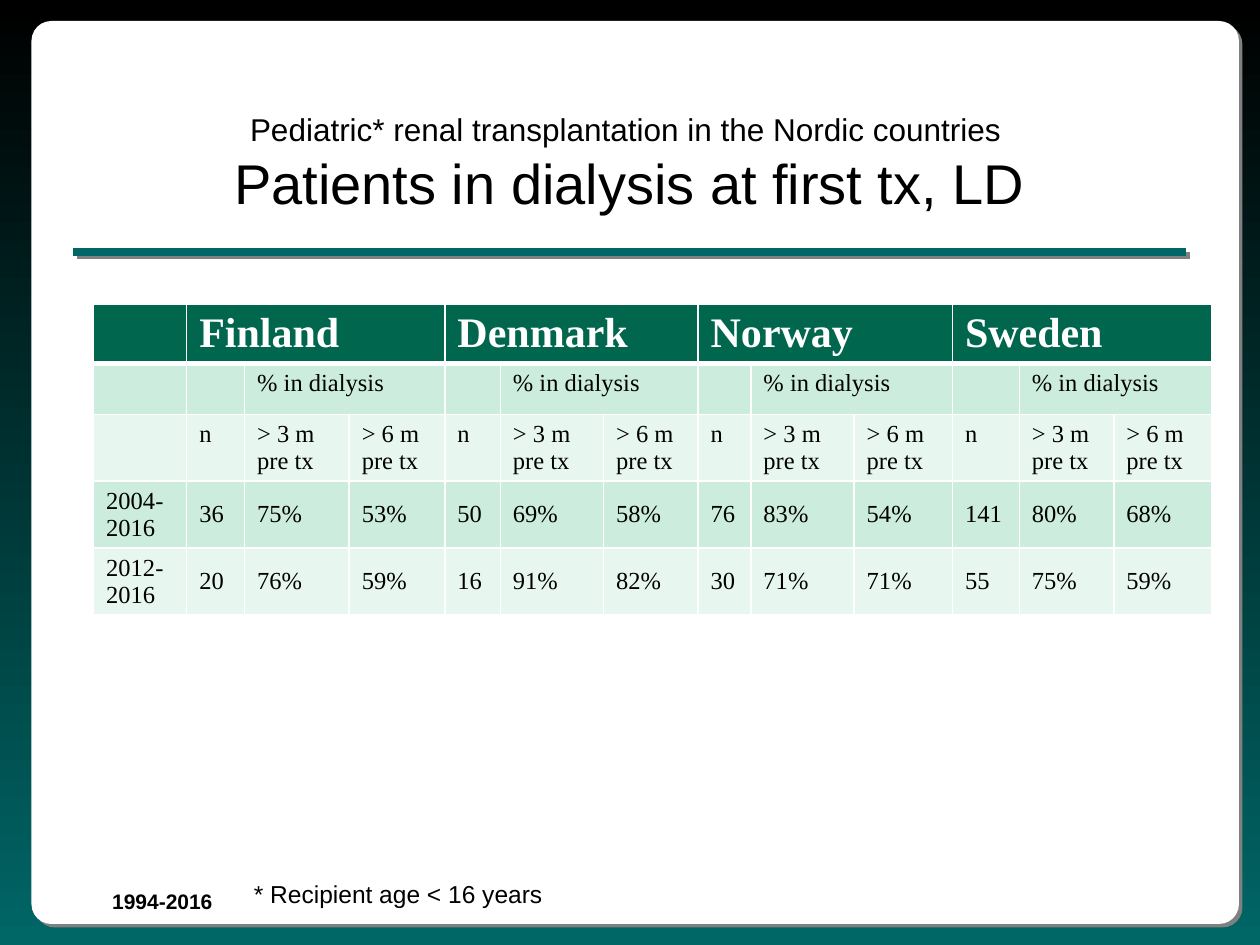
from lxml.etree import SubElement
from pptx import Presentation
from pptx.dml.color import RGBColor
from pptx.enum.shapes import MSO_CONNECTOR, MSO_SHAPE
from pptx.enum.text import MSO_ANCHOR, MSO_AUTO_SIZE, PP_ALIGN
from pptx.oxml.ns import qn
from pptx.util import Pt

COUNTRIES = ["Finland", "Denmark", "Norway", "Sweden"]
PERIODS = [
    ["2004-2016", "36", "75%", "53%", "50", "69%", "58%",
     "76", "83%", "54%", "141", "80%", "68%"],
    ["2012-2016", "20", "76%", "59%", "16", "91%", "82%",
     "30", "71%", "71%", "55", "75%", "59%"],
]
WIDTHS = [53.2, 33.1, 59.8, 54.7, 31.7, 59, 54, 30.2, 59, 56.2, 38.2, 54, 56.2]


def color(value):
    """Turn a hex string into a colour."""
    return RGBColor.from_string(value)


class DialysisSlide:
    """Hold the style and the slide, and draw each kind of element."""

    INK, PAPER, TEAL, SHADE = "000000", "FFFFFF", "006666", "808080"
    HEADER, BANDS = "00664D", ["CCECDE", "E7F6EF"]
    SANS, SERIF = "Arial", "Times New Roman"

    def __init__(self, deck):
        """Add a title-only slide with the gradient background."""
        self.slide = deck.slides.add_slide(deck.slide_layouts[5])
        backdrop = self.slide.background.fill
        backdrop.gradient()
        backdrop.gradient_angle = 270
        for stop, shade, position in zip(
                backdrop.gradient_stops, [self.INK, self.TEAL], [0, 1]):
            stop.color.rgb = color(shade)
            stop.position = position

    def format(self, font, shade=INK, **values):
        """Set the font values and the font colour."""
        for name, value in values.items():
            setattr(font, name, value)
        font.color.rgb = color(shade)

    def shadow(self, shape):
        """Give a shape a hard grey shadow to the lower right."""
        effects = SubElement(shape.element.spPr, qn("a:effectLst"))
        outer = SubElement(effects, qn("a:outerShdw"), blurRad="0",
                           dist=str(Pt(2.8)), dir="2700000", algn="ctr", rotWithShape="0")
        SubElement(outer, qn("a:srgbClr"), val=self.SHADE)

    def panel(self, left, top, width, height):
        """Draw the rounded white sheet."""
        sheet = self.slide.shapes.add_shape(
            MSO_SHAPE.ROUNDED_RECTANGLE, Pt(left), Pt(top), Pt(width), Pt(height))
        sheet.adjustments[0] = 0.022
        sheet.fill.solid()
        sheet.fill.fore_color.rgb = color(self.PAPER)
        sheet.line.fill.background()
        self.shadow(sheet)

    def rule(self, left, right, level):
        """Draw the heavy horizontal rule."""
        bar = self.slide.shapes.add_connector(
            MSO_CONNECTOR.STRAIGHT, Pt(left), Pt(level), Pt(right), Pt(level))
        bar.line.width = Pt(4.5)
        bar.line.color.rgb = color(self.TEAL)
        self.shadow(bar)

    def title(self, lead, heading, **place):
        """Fill the title and bring it in front of the sheet."""
        title = self.slide.shapes.title
        for name, value in place.items():
            setattr(title, name, Pt(value))
        title.element.getparent().append(title.element)
        frame = title.text_frame
        frame.vertical_anchor = MSO_ANCHOR.MIDDLE
        frame.auto_size = MSO_AUTO_SIZE.NONE
        line = frame.paragraphs[0]
        line.alignment = PP_ALIGN.CENTER
        for text, size in [(lead, 18), (heading, 32)]:
            run = line.add_run()
            run.text = text
            self.format(run.font, name=self.SANS, size=Pt(size))
            if text == lead:
                line.add_line_break()

    def note(self, text, left, top, width, height, wrap, **values):
        """Add a single line of text."""
        frame = self.slide.shapes.add_textbox(
            Pt(left), Pt(top), Pt(width), Pt(height)).text_frame
        frame.word_wrap = wrap
        frame.auto_size = MSO_AUTO_SIZE.SHAPE_TO_FIT_TEXT
        frame.text = text
        self.format(frame.paragraphs[0].font, name=self.SANS, **values)

    def borders(self, cell, row):
        """Draw white cell borders, heavier under the header."""
        edges = {"L": 1, "R": 1, "T": 3 if row == 1 else 1, "B": 3 if row == 0 else 1}
        for side, width in edges.items():
            edge = SubElement(cell._tc.get_or_add_tcPr(), qn(f"a:ln{side}"), w=str(Pt(width)))
            SubElement(SubElement(edge, qn("a:solidFill")), qn("a:srgbClr"), val=self.PAPER)

    def table(self, rows, widths, left, top, row_height):
        """Add the table with country and dialysis headings merged."""
        grid = self.slide.shapes.add_table(
            len(rows), len(widths), Pt(left), Pt(top),
            Pt(sum(widths)), Pt(row_height * len(rows))).table
        for column, width in zip(grid.columns, widths):
            column.width = Pt(width)
        for r, texts in enumerate(rows):
            grid.rows[r].height = Pt(row_height)
            header = r == 0
            for c, text in enumerate(texts):
                cell = grid.cell(r, c)
                self.borders(cell, r)
                cell.fill.solid()
                cell.fill.fore_color.rgb = color(self.HEADER if header else self.BANDS[(r - 1) % 2])
                cell.vertical_anchor = MSO_ANCHOR.TOP if r in (1, 2) else MSO_ANCHOR.MIDDLE
                cell.text = text
                self.format(cell.text_frame.paragraphs[0].font,
                            self.PAPER if header else self.INK, name=self.SERIF,
                            size=Pt(24 if header else 14), bold=header)
        for first in range(1, len(widths), 3):
            grid.cell(0, first).merge(grid.cell(0, first + 2))
            grid.cell(1, first + 1).merge(grid.cell(1, first + 2))


def main():
    """Build and save the slide."""
    deck = Presentation()
    deck.slide_width, deck.slide_height = Pt(720), Pt(540)
    page = DialysisSlide(deck)
    page.panel(18, 12, 690, 516)
    page.note("1994-2016", 57, 504, 106, 21.6, True, size=Pt(12), bold=True)
    page.rule(42, 678, 144)
    page.title("Pediatric* renal transplantation in the Nordic countries ",
               "Patients in dialysis at first tx, LD",
               left=54, top=48, width=612, height=90)
    headings = [
        [""] + [text for country in COUNTRIES for text in (country, "", "")],
        [""] + ["", "% in dialysis", ""] * len(COUNTRIES),
        [""] + ["n", "> 3 m pre tx", "> 6 m pre tx"] * len(COUNTRIES),
    ]
    page.table(headings + PERIODS, WIDTHS, 53.5, 173.8, 29.2)
    page.note("* Recipient age < 16 years", 138, 499, 180, 24.2, False, size=Pt(14))
    deck.save("out.pptx")


if __name__ == "__main__":
    main()
